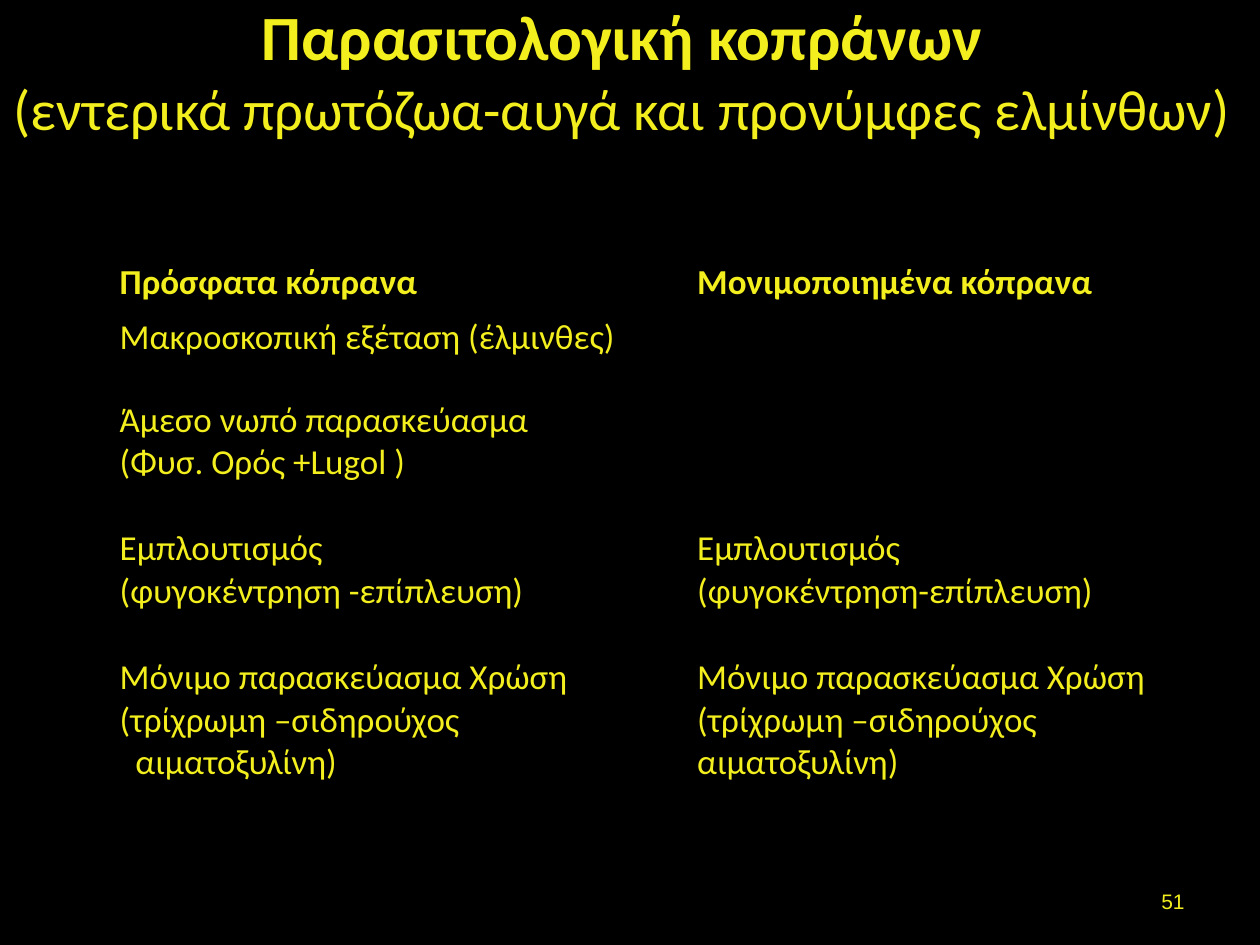
from lxml.etree import fromstring
from pptx import Presentation
from pptx.dml.color import RGBColor
from pptx.enum.text import MSO_ANCHOR, PP_ALIGN
from pptx.oxml.ns import nsdecls
from pptx.util import Pt

YELLOW = RGBColor(0xF3, 0xEE, 0x1E)
BLACK = RGBColor(0, 0, 0)


def style(font, size, bold=False, name="Calibri"):
    font.name, font.size, font.bold = name, Pt(size), bold
    font.color.rgb = YELLOW


def border(cell):
    """Draw a 1 pt line on all four sides of a cell."""
    props = cell._tc.get_or_add_tcPr()
    for i, side in enumerate("LRTB"):
        props.insert(i, fromstring(
            f'<a:ln{side} {nsdecls("a")} w="12700"><a:solidFill>'
            f'<a:srgbClr val="{BLACK}"/></a:solidFill></a:ln{side}>'))


deck = Presentation()
deck.slide_width, deck.slide_height = Pt(720), Pt(540)
slide = deck.slides.add_slide(deck.slide_layouts[5])
slide.background.fill.solid()
slide.background.fill.fore_color.rgb = BLACK

# Title: two lines, raised by a deep bottom inset
title = slide.shapes.title
title.left, title.top, title.width, title.height = Pt(0), Pt(20), Pt(711), Pt(71.5)
frame = title.text_frame
frame.word_wrap = True
frame.vertical_anchor = MSO_ANCHOR.MIDDLE
frame.margin_bottom = Pt(35.6)
para = frame.paragraphs[0]
para.alignment = PP_ALIGN.CENTER
head = para.add_run()
head.text = "Παρασιτολογική κοπράνων"
style(head.font, 36, True)
para.add_line_break()
sub = para.add_run()
sub.text = "(εντερικά πρωτόζωα-αυγά και προνύμφες ελμίνθων)"
style(sub.font, 32.4)

# Table: fresh against preserved samples
ROWS = [
    (31, "Πρόσφατα κόπρανα", "Μονιμοποιημένα κόπρανα"),
    (47, "Μακροσκοπική εξέταση (έλμινθες)", ""),
    (73.5, "Άμεσο νωπό παρασκεύασμα\n(Φυσ. Ορός +Lugol )", ""),
    (73.5, "Εμπλουτισμός\n(φυγοκέντρηση -επίπλευση)",
     "Εμπλουτισμός\n(φυγοκέντρηση-επίπλευση)"),
    (79.5, "Μόνιμο παρασκεύασμα Χρώση (τρίχρωμη –σιδηρούχος\nαιματοξυλίνη)",
     "Μόνιμο παρασκεύασμα Χρώση (τρίχρωμη –σιδηρούχος αιματοξυλίνη)"),
]
table = slide.shapes.add_table(
    len(ROWS), 2, Pt(61.2), Pt(145.5), Pt(605), Pt(304.5)).table
table.columns[0].width, table.columns[1].width = Pt(330), Pt(275)
for r, (height, *texts) in enumerate(ROWS):
    table.rows[r].height = Pt(height)
    for c, text in enumerate(texts):
        cell = table.cell(r, c)
        cell.fill.background()
        border(cell)
        cell.text = text
        for para in cell.text_frame.paragraphs:
            style(para.font, 20, r == 0)

# The last line on the left is indented
last = table.cell(4, 0).text_frame.paragraphs[1]
last._p.get_or_add_pPr().set("marL", str(Pt(9)))

# Slide number
box = slide.shapes.add_textbox(Pt(516), Pt(500.5), Pt(168), Pt(28.8))
frame = box.text_frame
frame.word_wrap = True
frame.vertical_anchor = MSO_ANCHOR.MIDDLE
para = frame.paragraphs[0]
para.text = "51"
para.alignment = PP_ALIGN.RIGHT
style(para.font, 12, name="Arial")

deck.save("out.pptx")
